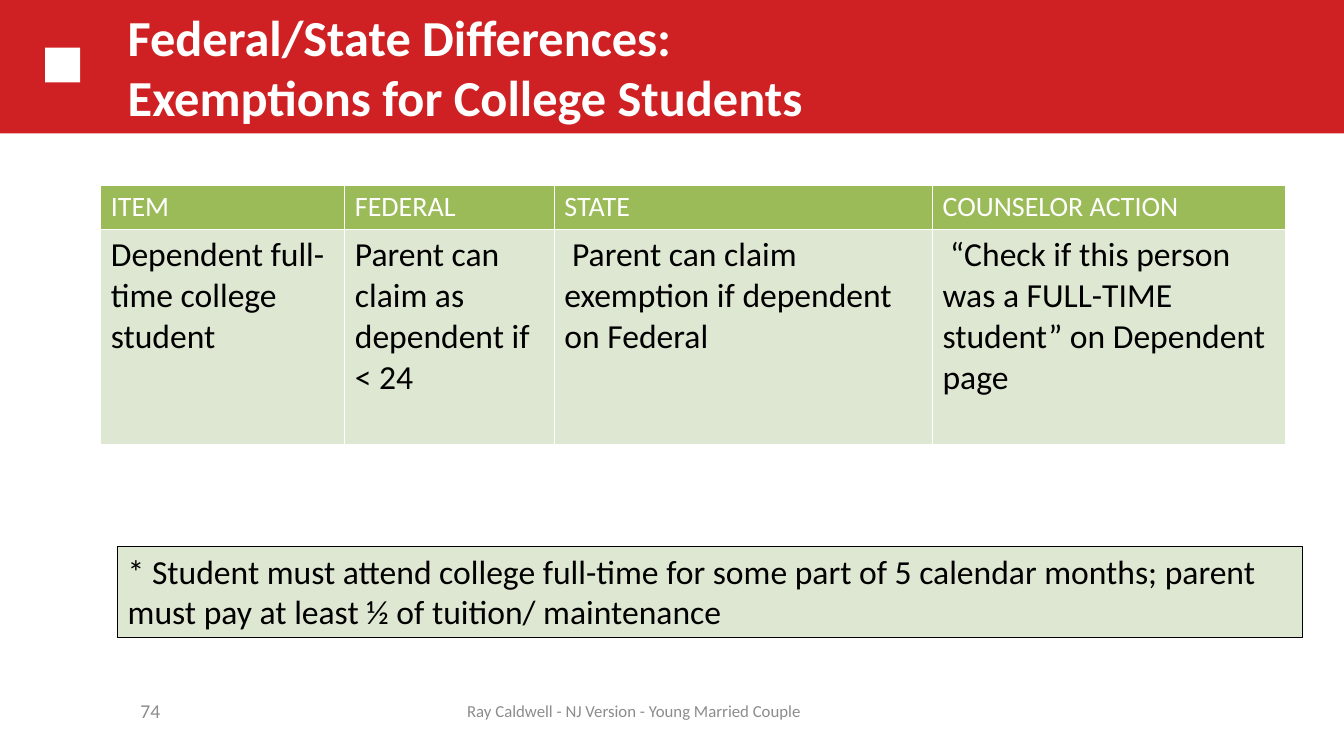
from dataclasses import dataclass

from lxml.etree import SubElement
from pptx import Presentation
from pptx.dml.color import RGBColor
from pptx.enum.shapes import MSO_SHAPE
from pptx.enum.text import MSO_ANCHOR, PP_ALIGN
from pptx.oxml.ns import qn
from pptx.util import Cm, Pt

RED = RGBColor(0xCF, 0x21, 0x24)
WHITE = RGBColor(0xFF, 0xFF, 0xFF)
BLACK = RGBColor(0x00, 0x00, 0x00)
GREEN = RGBColor(0x9B, 0xBB, 0x59)
PALE_GREEN = RGBColor(0xDE, 0xE7, 0xD1)
GRAY = RGBColor(0x8C, 0x8C, 0x8C)


@dataclass(frozen=True)
class Area:
    """Position and size in centimetres."""
    left: float
    top: float
    width: float
    height: float

    def lengths(self) -> tuple:
        return Cm(self.left), Cm(self.top), Cm(self.width), Cm(self.height)


@dataclass(frozen=True)
class Style:
    size: int
    color: RGBColor
    bold: bool = False
    align: PP_ALIGN = PP_ALIGN.LEFT
    anchor: MSO_ANCHOR = MSO_ANCHOR.MIDDLE


@dataclass(frozen=True)
class Label:
    area: Area
    lines: tuple[str, ...]
    style: Style


@dataclass(frozen=True)
class Column:
    width: float
    heading: str
    entry: str


@dataclass(frozen=True)
class RowLook:
    height: float
    fill: RGBColor
    style: Style


LABELS = (
    Label(Area(2.97, 0.08, 27.08, 3.18),
          ("Federal/State Differences:", "Exemptions for College Students"),
          Style(36, WHITE, bold=True)),
    Label(Area(1.7, 17.4, 2.59, 1.02), ("74",),
          Style(14, GRAY, align=PP_ALIGN.RIGHT)),
    Label(Area(9.53, 17.4, 12.9, 1.02),
          ("Ray Caldwell - NJ Version - Young Married Couple",),
          Style(12, GRAY, align=PP_ALIGN.CENTER)),
)
COLUMNS = (
    Column(6.15, "ITEM", "Dependent full-time college student"),
    Column(5.28, "FEDERAL", "Parent can claim as dependent if < 24"),
    Column(9.53, "STATE", " Parent can claim exemption if dependent on Federal"),
    Column(8.89, "COUNSELOR ACTION",
           " “Check if this person was a FULL-TIME student” on Dependent page"),
)
ROWS = (
    RowLook(1.13, GREEN, Style(20, WHITE, anchor=MSO_ANCHOR.TOP)),
    RowLook(5.41, PALE_GREEN, Style(24, BLACK, anchor=MSO_ANCHOR.TOP)),
)
NOTE = ("* Student must attend college full-time for some part of 5 calendar months; "
        "parent must pay at least ½ of tuition/ maintenance")


def write(frame, lines: tuple[str, ...], style: Style) -> None:
    para = frame.paragraphs[0]
    para.alignment = style.align
    for index, line in enumerate(lines):
        if index:
            para.add_line_break()
        span = para.add_run()
        span.text = line
        span.font.name = "Calibri"
        span.font.size = Pt(style.size)
        span.font.bold = style.bold
        span.font.color.rgb = style.color


def add_label(page, label: Label) -> None:
    frame = page.shapes.add_textbox(*label.area.lengths()).text_frame
    frame.word_wrap = True
    frame.vertical_anchor = label.style.anchor
    write(frame, label.lines, label.style)


def add_box(page, area: Area, fill: RGBColor):
    box = page.shapes.add_shape(MSO_SHAPE.RECTANGLE, *area.lengths())
    box.shadow.inherit = False
    box.fill.solid()
    box.fill.fore_color.rgb = fill
    box.line.fill.background()
    return box


def add_cell_borders(cell, color: RGBColor) -> None:
    properties = cell._tc.get_or_add_tcPr()
    for position, side in enumerate(("lnL", "lnR", "lnT", "lnB")):
        line = SubElement(properties, qn(f"a:{side}"), w=str(Pt(1)))
        properties.insert(position, line)
        fill = SubElement(line, qn("a:solidFill"))
        SubElement(fill, qn("a:srgbClr"), val=str(color))


def add_differences_table(page) -> None:
    area = Area(2.54, 4.66, sum(column.width for column in COLUMNS),
                sum(row.height for row in ROWS))
    table = page.shapes.add_table(len(ROWS), len(COLUMNS), *area.lengths()).table
    for row_index, row in enumerate(ROWS):
        table.rows[row_index].height = Cm(row.height)
        for column_index, column in enumerate(COLUMNS):
            table.columns[column_index].width = Cm(column.width)
            cell = table.cell(row_index, column_index)
            cell.fill.solid()
            cell.fill.fore_color.rgb = row.fill
            cell.vertical_anchor = row.style.anchor
            add_cell_borders(cell, WHITE)
            text = (column.heading, column.entry)[row_index]
            write(cell.text_frame, (text,), row.style)


def add_note(page) -> None:
    box = add_box(page, Area(2.97, 13.76, 29.85, 2.31), PALE_GREEN)
    box.line.color.rgb = BLACK
    box.line.width = Pt(0.75)
    frame = box.text_frame
    frame.word_wrap = True
    frame.vertical_anchor = MSO_ANCHOR.TOP
    write(frame, (NOTE,), Style(24, BLACK))


def main() -> None:
    deck = Presentation()
    deck.slide_width, deck.slide_height = Cm(33.87), Cm(19.05)
    page = deck.slides.add_slide(deck.slide_layouts[6])

    # Title band with its square marker
    add_box(page, Area(0, -0.02, 33.87, 3.38), RED)
    add_box(page, Area(1.14, 1.2, 0.88, 0.88), WHITE)

    # Table and note
    add_differences_table(page)
    add_note(page)

    # Title, page number and footer
    for label in LABELS:
        add_label(page, label)

    deck.save("out.pptx")


if __name__ == "__main__":
    main()
